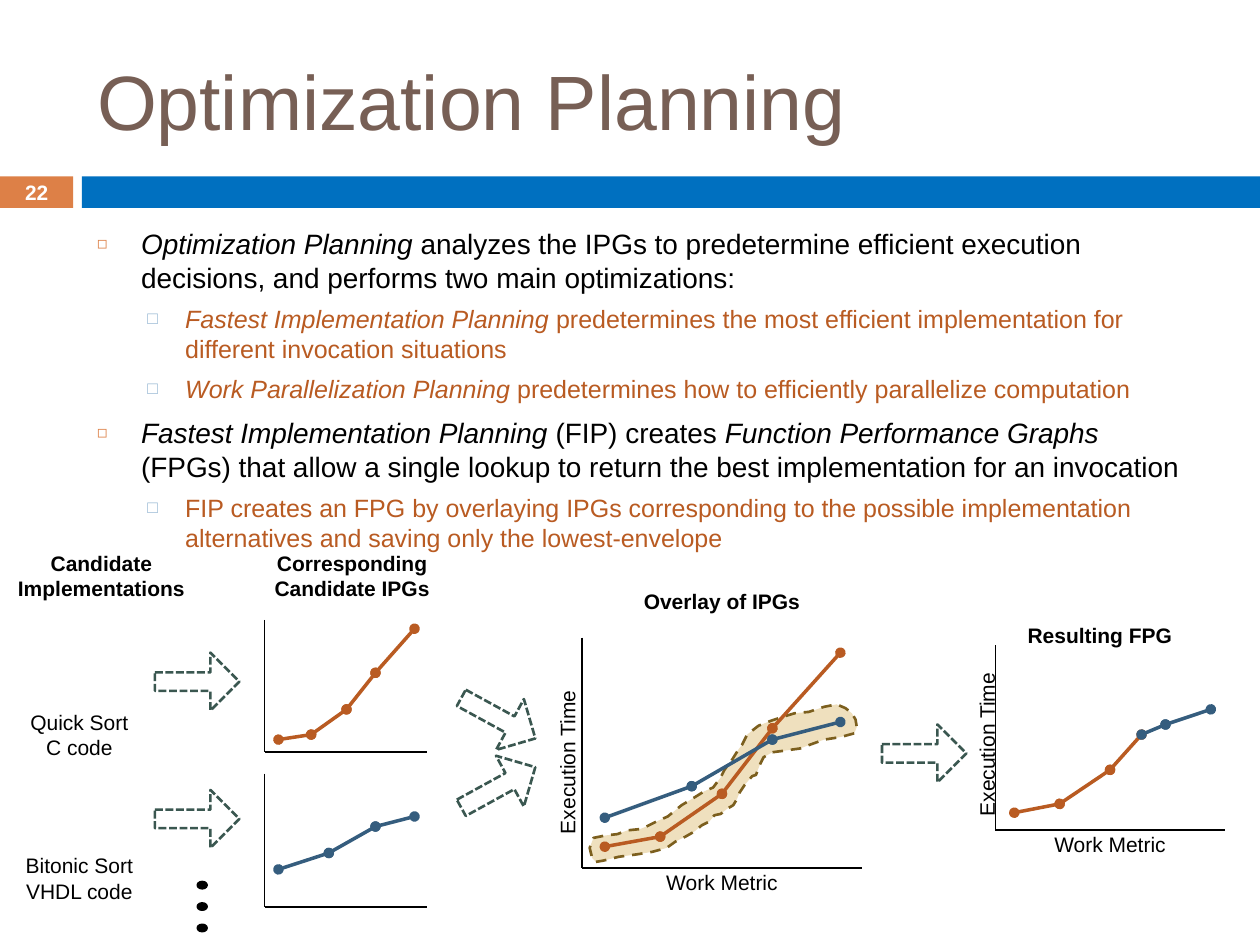
from itertools import pairwise
from typing import NamedTuple

from lxml import etree
from pptx import Presentation
from pptx import util as u
from pptx.dml.color import RGBColor
from pptx.enum import dml, shapes, text
from pptx.oxml.ns import qn

PX = 9144  # EMU per px, 100 px to the inch
FONT = "Arial"
HUE = {
    "title": "775F55", "band": "0070C0", "tag": "DD8047", "mark": "94B6D2",
    "rust": "B95B22", "navy": "355D7E", "arrow": "3A5750",
    "sand": "EFE0BE", "edge": "7C5F1E", "black": "000000", "white": "FFFFFF",
}
Point = tuple[int, int]


class Box(NamedTuple):
    x: int
    y: int
    w: int
    h: int


class Label(NamedTuple):
    words: str
    box: Box
    bold: bool = False
    turn: int = 0


class Arrow(NamedTuple):
    x: int
    y: int
    turn: float = 0


class Curve(NamedTuple):
    hue: str
    pts: list[Point]


class Plot(NamedTuple):
    box: Box  # the axes run down its left side and along its foot
    curves: list[Curve]


class Item(NamedTuple):
    words: str  # stars enclose italics
    sub: bool = False


# Content
ITEMS = [
    Item("*Optimization Planning* analyzes the IPGs to predetermine efficient "
         "execution decisions, and performs two main optimizations:"),
    Item("*Fastest Implementation Planning* predetermines the most efficient "
         "implementation for different invocation situations", True),
    Item("*Work Parallelization Planning* predetermines how to efficiently "
         "parallelize computation", True),
    Item("*Fastest Implementation Planning* (FIP) creates *Function Performance "
         "Graphs* (FPGs) that allow a single lookup to return the best "
         "implementation for an invocation"),
    Item("FIP creates an FPG by overlaying IPGs corresponding to the possible "
         "implementation alternatives and saving only the lowest-envelope", True),
]
LABELS = [
    Label("Candidate Implementations", Box(2, 437, 157, 40), True),
    Label("Corresponding Candidate IPGs", Box(193, 437, 173, 40), True),
    Label("Overlay of IPGs", Box(462, 467, 222, 20), True),
    Label("Resulting FPG", Box(785, 494, 176, 20), True),
    Label("Quick Sort\vC code", Box(-2, 563, 130, 40)),
    Label("Bitonic Sort\vVHDL code", Box(-2, 677, 130, 40)),
    Label("Work Metric", Box(462, 690, 222, 21)),
    Label("Work Metric", Box(790, 660, 182, 20)),
    Label("Execution Time", Box(365, 594, 172, 22), turn=270),
    Label("Execution Time", Box(713, 582, 138, 18), turn=270),
]
ARROWS = [Arrow(123, 518), Arrow(123, 627), Arrow(362, 547, 28.7),
          Arrow(362, 602, 331.2), Arrow(700, 575)]
PLOTS = [
    Plot(Box(210, 492, 129, 105), [
        Curve("rust", [(221, 587), (247, 583), (275, 563), (298, 534), (329, 499)])]),
    Plot(Box(210, 614, 129, 106), [
        Curve("navy", [(221, 690), (261, 677), (298, 656), (329, 648)])]),
    Plot(Box(462, 506, 222, 183), [
        Curve("rust", [(480, 672), (524, 664), (573, 630), (613, 578), (667, 518)]),
        Curve("navy", [(480, 649), (549, 624), (613, 587), (667, 573)])]),
    Plot(Box(790, 512, 182, 147), [
        Curve("rust", [(805, 645), (841, 638), (881, 611), (906, 583)]),
        Curve("navy", [(906, 583), (925, 575), (961, 563)])]),
]
# Outline of the lowest envelope: its lower edge rightwards, then its upper one back
LOWER = [(473, 684), (479, 683), (483, 682), (491, 680), (506, 678), (518, 676),
         (529, 673), (536, 668), (544, 664), (551, 660), (557, 655), (563, 652),
         (567, 647), (572, 646), (577, 642), (582, 639), (585, 634), (587, 629),
         (591, 623), (597, 616), (600, 615), (603, 607), (606, 601), (613, 597),
         (621, 596), (635, 594), (643, 591), (654, 587), (667, 585), (678, 582)]
UPPER = [(680, 577), (679, 571), (676, 566), (671, 562), (664, 559), (654, 561),
         (642, 565), (631, 566), (621, 569), (612, 572), (602, 576), (593, 583),
         (589, 591), (586, 595), (581, 603), (575, 611), (572, 617), (566, 625),
         (559, 628), (551, 633), (541, 639), (530, 648), (521, 652), (513, 656),
         (508, 658), (498, 659), (490, 662), (481, 663), (471, 665), (468, 673),
         (470, 681)]


def tint(name: str) -> RGBColor:
    return RGBColor.from_string(HUE[name])


def place(shape, box: Box) -> None:
    shape.left, shape.top, shape.width, shape.height = (n * PX for n in box)


def write(par, words: str, size: float = 12, hue: str = "black",
          bold: bool = False, align=text.PP_ALIGN.CENTER) -> None:
    """Fill a paragraph; stars switch italics on and off."""
    par.alignment = align
    for i, bit in enumerate(words.split("*")):
        for j, line in enumerate(bit.split("\v")):
            if j:
                par.add_line_break()
            if line:
                run = par.add_run()
                run.text = line
                font = run.font
                font.name, font.size, font.bold = FONT, u.Pt(size), bold
                font.italic = i % 2 == 1
                font.color.rgb = tint(hue)


def label(slide, lab: Label, **form) -> None:
    shape = slide.shapes.add_textbox(0, 0, 0, 0)
    place(shape, lab.box)
    shape.rotation = lab.turn
    frame = shape.text_frame
    frame.word_wrap = True
    frame.margin_left = frame.margin_right = 0
    frame.margin_top = frame.margin_bottom = 0
    write(frame.paragraphs[0], lab.words, bold=lab.bold, **form)


def style(shape, fill: str = "", line: str = "", dash=None) -> None:
    shape.shadow.inherit = False
    if fill:
        shape.fill.solid()
        shape.fill.fore_color.rgb = tint(fill)
    else:
        shape.fill.background()
    if line:
        shape.line.color.rgb = tint(line)
        shape.line.width = u.Pt(1.5)
        shape.line.dash_style = dash
    else:
        shape.line.fill.background()


def preset(slide, kind, box: Box, **look):
    shape = slide.shapes.add_shape(kind, 0, 0, 0, 0)
    place(shape, box)
    style(shape, **look)
    return shape


def stroke(slide, start: Point, end: Point, hue: str = "black",
           width: int = 1, dots: bool = False) -> None:
    line = slide.shapes.add_connector(
        shapes.MSO_CONNECTOR.STRAIGHT, *(n * PX for n in start + end))
    line.line.color.rgb = tint(hue)
    line.line.width = u.Pt(width)
    if dots:
        for tag in ("a:headEnd", "a:tailEnd"):
            etree.SubElement(line.line._get_or_add_ln(), qn(tag), type="oval")
    etree.SubElement(line._element.spPr, qn("a:effectLst"))


def plot(slide, graph: Plot) -> None:
    x, y, w, h = graph.box
    for a, b in pairwise([(x, y), (x, y + h), (x + w, y + h)]):
        stroke(slide, a, b)
    for curve in graph.curves:
        for a, b in pairwise(curve.pts):
            stroke(slide, a, b, curve.hue, 2, dots=True)


def bullet(par, sign: str, hue: str, pct: int, left: int, hang: int) -> None:
    props = par._p.get_or_add_pPr()
    props.set("marL", str(left * PX))
    props.set("indent", str(-hang * PX))
    shade = etree.SubElement(props, qn("a:buClr"))
    etree.SubElement(shade, qn("a:srgbClr"), val=HUE[hue])
    etree.SubElement(props, qn("a:buSzPct"), val=str(pct * 1000))
    etree.SubElement(props, qn("a:buFont"), typeface=FONT)
    etree.SubElement(props, qn("a:buChar"), char=sign)


def head(slide) -> None:
    title = slide.shapes.title
    place(title, Box(67, 25, 892, 108))
    title.text_frame.vertical_anchor = text.MSO_ANCHOR.MIDDLE
    write(title.text_frame.paragraphs[0], "Optimization Planning", 44, "title",
          align=text.PP_ALIGN.LEFT)


def body(slide) -> None:
    shape = slide.placeholders[1]
    place(shape, Box(67, 175, 892, 258))
    frame = shape.text_frame
    frame.auto_size = text.MSO_AUTO_SIZE.NONE
    for i, item in enumerate(ITEMS):
        par = frame.add_paragraph() if i else frame.paragraphs[0]
        par.level = int(item.sub)
        par.line_spacing = 1.0
        par.space_before = u.Pt(5.5 if item.sub else 7)
        size, hue = (14.3, "rust") if item.sub else (16, "black")
        write(par, item.words, size, hue, align=text.PP_ALIGN.LEFT)
        if item.sub:
            bullet(par, "□", "mark", 70, 70, 30)
        else:
            bullet(par, "◻", "tag", 60, 35, 35)


def main() -> None:
    deck = Presentation()
    deck.slide_width, deck.slide_height = 1000 * PX, 750 * PX
    slide = deck.slides.add_slide(deck.slide_layouts[1])
    kind = shapes.MSO_SHAPE

    # Title, band with slide number, and list
    head(slide)
    preset(slide, kind.RECTANGLE, Box(0, 140, 58, 25), fill="tag")
    preset(slide, kind.RECTANGLE, Box(65, 140, 935, 25), fill="band")
    label(slide, Label("22", Box(0, 143, 58, 20), True), size=11.9, hue="white")
    body(slide)

    # Envelope behind the overlaid graphs
    form = slide.shapes.build_freeform(*LOWER[0], scale=PX)
    form.add_line_segments(LOWER[1:] + UPPER, close=True)
    style(form.convert_to_shape(), "sand", "edge", dml.MSO_LINE.DASH)

    # Graphs, arrows, dots and labels
    for graph in PLOTS:
        plot(slide, graph)
    for x, y, turn in ARROWS:
        arrow = preset(slide, kind.RIGHT_ARROW, Box(x, y, 67, 46),
                       line="arrow", dash=dml.MSO_LINE.SQUARE_DOT)
        arrow.adjustments[0], arrow.adjustments[1] = 0.32, 0.5
        arrow.rotation = turn
    for i in range(3):
        preset(slide, kind.OVAL, Box(157, 700 + 17 * i, 7, 5),
               fill="black", line="black")
    for lab in LABELS:
        label(slide, lab)

    deck.save("out.pptx")


if __name__ == "__main__":
    main()
